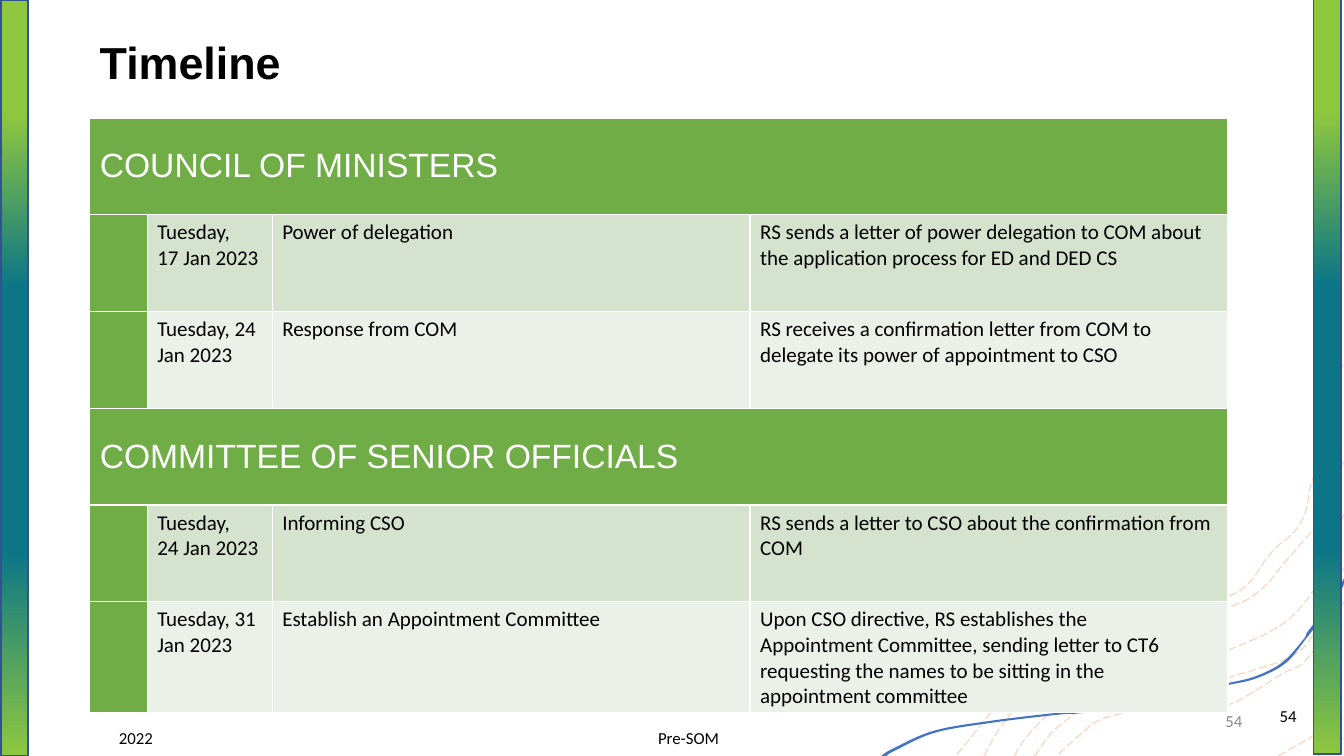
"""Build the appointment timeline slide with two tables, side bars and contour lines."""
from lxml import etree
from pptx import Presentation
from pptx.dml.color import RGBColor
from pptx.enum.dml import MSO_LINE
from pptx.enum.shapes import MSO_SHAPE
from pptx.enum.text import MSO_ANCHOR, PP_ALIGN
from pptx.oxml.ns import qn
from pptx.util import Inches, Pt

RECT = MSO_SHAPE.RECTANGLE
DASH = MSO_LINE.LONG_DASH
MIDDLE, TOP = MSO_ANCHOR.MIDDLE, MSO_ANCHOR.TOP
LEFT, CENTER, RIGHT = PP_ALIGN.LEFT, PP_ALIGN.CENTER, PP_ALIGN.RIGHT

COLORS = {
    "black": "000000", "white": "FFFFFF", "grey": "888888", "green": "70AD47",
    "band1": "D4E2CE", "band2": "EBF1E8", "lime": "8EC73E", "teal": "0C7687",
    "edge": "31538F", "orange": "ED7D31", "blue": "4472C4",
}
W, H = 13.33, 7.5
TABLE_LEFT, TABLE_TOP, ROW_H = 0.89, 1.17, 0.96
COLS = [0.57, 1.24, 4.74, 4.74]
BAR_W = 0.27
BARS = [(13.03, -0.02), (0.01, 0)]
STOPS = [(0, "lime"), (15, "lime"), (38, "teal"), (73, "teal"), (100, "lime")]

TABLES = [
    ("COUNCIL OF MINISTERS", [
        (["Tuesday,", "17 Jan 2023"], ["Power of delegation"],
         ["RS sends a letter of power delegation to COM about the application process for ED and DED CS"]),
        (["Tuesday, 24 Jan 2023"], ["Response from COM"],
         ["RS receives a confirmation letter from COM to delegate its power of appointment to CSO"]),
    ]),
    ("COMMITTEE OF SENIOR OFFICIALS", [
        (["Tuesday,", "24 Jan 2023"], ["Informing CSO"],
         ["RS sends a letter to CSO about the confirmation from COM"]),
        (["Tuesday, 31 Jan 2023"], ["Establish an Appointment Committee"],
         ["Upon CSO directive, RS establishes the",
          "Appointment Committee, sending letter to CT6",
          "requesting the names to be sitting in the appointment committee"]),
    ]),
]
PAGE_NUMBER = ("54", 9.42, 6.95, 3, 0.4, RIGHT, 12, "Calibri", "grey", False)
LABELS = [
    ("Pre-SOM", 4.58, 7.12, 4.5, 0.4, CENTER, 12, "Calibri", "black", False),
    ("2022", 1.08, 7.12, 3, 0.4, LEFT, 12, "Calibri", "black", False),
    ("54", 9.96, 6.9, 3, 0.4, RIGHT, 12, "Calibri", "black", False),
]
TITLE = ("Timeline", 0.89, 0.3, 9.14, 0.69, LEFT, 32, "Arial", "black", True)
CONTOURS = [
    [(9.49, 7.48), (9.57, 7.39), (9.78, 7.13), (9.93, 6.95), (10.09, 6.8), (10.39, 6.6), (10.63, 6.43),
     (10.85, 6.3), (11.05, 6.25), (11.2, 6.27), (11.33, 6.29), (11.44, 6.29), (11.62, 6.2), (11.8, 6.07),
     (11.86, 6.04), (12.07, 5.96), (12.2, 5.91), (12.31, 5.85), (12.41, 5.76), (12.47, 5.68), (12.56, 5.54),
     (12.68, 5.41), (12.79, 5.32), (12.87, 5.23), (12.94, 5.1), (12.98, 4.93), (12.99, 4.85), (13.11, 4.45),
     (13.15, 4.04), (13.33, 3.59)],
    [(9.76, 7.5), (9.92, 7.22), (10.15, 6.94), (10.37, 6.77), (10.56, 6.62), (10.82, 6.45), (10.88, 6.42),
     (11.1, 6.38), (11.21, 6.4), (11.29, 6.41), (11.53, 6.41), (11.71, 6.33), (11.82, 6.24), (12.02, 6.1),
     (12.25, 6), (12.4, 5.93), (12.57, 5.79), (12.7, 5.63), (12.83, 5.48), (12.93, 5.36), (13.02, 5.26),
     (13.08, 5.11), (13.14, 4.92), (13.33, 4.58)],
    [(13.07, 7.5), (13.35, 7.3)],
    [(12.68, 7.5), (13.32, 7.13)],
    [(10.5, 7.48), (10.7, 7.3), (10.91, 7.14), (11.26, 7.05), (11.53, 6.99), (11.78, 7.01), (11.95, 7.03),
     (12.24, 6.97), (12.71, 6.69), (12.97, 6.53), (13.33, 5.97)],
    [(10.26, 7.5), (10.46, 7.24), (10.79, 7.01), (11.14, 6.92), (11.56, 6.85), (11.91, 6.81), (12.22, 6.71),
     (12.59, 6.6), (12.78, 6.53), (12.95, 6.4), (13.1, 6.15), (13.35, 5.59)],
    [(10.06, 7.5), (10.19, 7.3), (10.49, 7), (10.78, 6.8), (11.07, 6.75), (11.32, 6.72), (11.5, 6.7),
     (11.91, 6.58), (12.23, 6.43), (12.51, 6.31), (12.75, 6.17), (12.92, 6), (13.07, 5.77), (13.33, 5.1)],
]
RIVER_LOWER = [(13.35, 5.75), (13.27, 5.91), (13.09, 6.16), (12.99, 6.29), (12.95, 6.34), (12.75, 6.58),
               (12.46, 6.73), (12.16, 6.8), (11.93, 6.85), (11.57, 6.93), (11.46, 6.96), (11.06, 7.04),
               (10.67, 7.08), (10.5, 7.09), (9.84, 7.17), (9.27, 7.27), (8.87, 7.45), (8.79, 7.5)]
RIVER_UPPER = [(8.74, 7.5), (8.85, 7.43), (9.26, 7.25), (9.83, 7.15), (10.5, 7.07), (10.67, 7.06),
               (11.06, 7.02), (11.45, 6.94), (11.56, 6.91), (11.92, 6.83), (12.16, 6.78), (12.45, 6.71),
               (12.72, 6.57), (12.93, 6.34), (12.96, 6.28), (13.06, 6.15), (13.24, 5.91), (13.35, 5.69)]


def rgb(name):
    return RGBColor.from_string(COLORS[name])


def add_curve(shapes, *edges, close=False):
    """Draw each edge as smooth cubic segments, with straight joins between edges."""
    start, *rest = [(Inches(x), Inches(y)) for edge in edges for x, y in edge]
    builder = shapes.build_freeform(*start)
    builder.add_line_segments(rest, close=close)
    sp = builder.convert_to_shape()
    sp.shadow.inherit = False
    nodes = list(sp._element.iter(qn("a:moveTo"), qn("a:lnTo")))
    pts = [(int(n[0].get("x")), int(n[0].get("y"))) for n in nodes]
    first = 0
    for edge in edges:
        last = first + len(edge) - 1
        for i in range(first + 1, last + 1):
            before, a, b, after = pts[max(i - 2, first)], pts[i - 1], pts[i], pts[min(i + 1, last)]
            c1 = [q + (r - p) / 6 for p, q, r in zip(before, a, b)]
            c2 = [q - (r - p) / 6 for p, q, r in zip(a, b, after)]
            nodes[i].tag = qn("a:cubicBezTo")
            for k, (x, y) in enumerate([c1, c2]):
                nodes[i].insert(k, etree.Element(qn("a:pt"), x=str(round(x)), y=str(round(y))))
        first = last + 1
    return sp


def add_contour(shapes, points):
    sp = add_curve(shapes, points)
    sp.fill.background()
    sp.line.color.rgb = rgb("orange")
    sp.line.width = Pt(0.75)
    sp.line.dash_style = DASH
    color = sp._element.spPr.find(qn("a:ln")).find(".//" + qn("a:srgbClr"))
    etree.SubElement(color, qn("a:alpha"), val="34000")


def add_river(shapes):
    sp = add_curve(shapes, RIVER_LOWER, RIVER_UPPER, close=True)
    sp.fill.solid()
    sp.fill.fore_color.rgb = rgb("blue")
    sp.line.fill.background()


def add_bar(shapes, left, top):
    sp = shapes.add_shape(RECT, Inches(left), Inches(top), Inches(BAR_W), Inches(H))
    sp.shadow.inherit = False
    sp.line.color.rgb = rgb("edge")
    sp.line.width = Pt(1)
    sp.fill.gradient()
    sp.fill.gradient_angle = 270
    stops = sp._element.spPr.find(".//" + qn("a:gsLst"))
    for gs in list(stops):
        stops.remove(gs)
    for pos, color in STOPS:
        gs = etree.SubElement(stops, qn("a:gs"), pos=str(pos * 1000))
        etree.SubElement(gs, qn("a:srgbClr"), val=COLORS[color])


def write(tf, lines, size, font, color, bold, align=LEFT):
    tf.word_wrap = True
    for i, line in enumerate(lines):
        p = tf.add_paragraph() if i else tf.paragraphs[0]
        p.alignment = align
        r = p.add_run()
        r.text = line
        r.font.size, r.font.name, r.font.bold = Pt(size), font, bold
        r.font.color.rgb = rgb(color)


def add_label(shapes, text, left, top, width, height, align, size, font, color, bold):
    sp = shapes.add_textbox(Inches(left), Inches(top), Inches(width), Inches(height))
    sp.text_frame.vertical_anchor = MIDDLE
    write(sp.text_frame, [text], size, font, color, bold, align)
    return sp


def add_timeline(shapes, top, heading, rows):
    count = len(rows) + 1
    table = shapes.add_table(count, len(COLS), Inches(TABLE_LEFT), Inches(top),
                             Inches(sum(COLS)), Inches(ROW_H * count)).table
    for col, width in zip(table.columns, COLS):
        col.width = Inches(width)
    for n, row in enumerate(table.rows):
        row.height = Inches(ROW_H)
        for c, cell in enumerate(row.cells):
            cell.fill.solid()
            cell.fill.fore_color.rgb = rgb("green" if n == 0 or c == 0 else f"band{n}")
            cell.vertical_anchor = TOP if n else MIDDLE
            if n and c:
                write(cell.text_frame, rows[n - 1][c - 1], 15, "Calibri", "black", False)
    table.cell(0, 0).merge(table.cell(0, len(COLS) - 1))
    write(table.cell(0, 0).text_frame, [heading], 24, "Arial", "white", False)


def main():
    prs = Presentation()
    prs.slide_width, prs.slide_height = Inches(W), Inches(H)
    shapes = prs.slides.add_slide(prs.slide_layouts[6]).shapes
    for points in CONTOURS:
        add_contour(shapes, points)
    add_river(shapes)
    add_label(shapes, *PAGE_NUMBER)
    for left, top in BARS:
        add_bar(shapes, left, top)
    for label in LABELS:
        add_label(shapes, *label)
    top = TABLE_TOP
    for heading, rows in TABLES:
        add_timeline(shapes, top, heading, rows)
        top += ROW_H * (len(rows) + 1)
    title = add_label(shapes, *TITLE)
    title.text_frame.paragraphs[0].line_spacing = 0.9
    prs.save("out.pptx")


if __name__ == "__main__":
    main()
